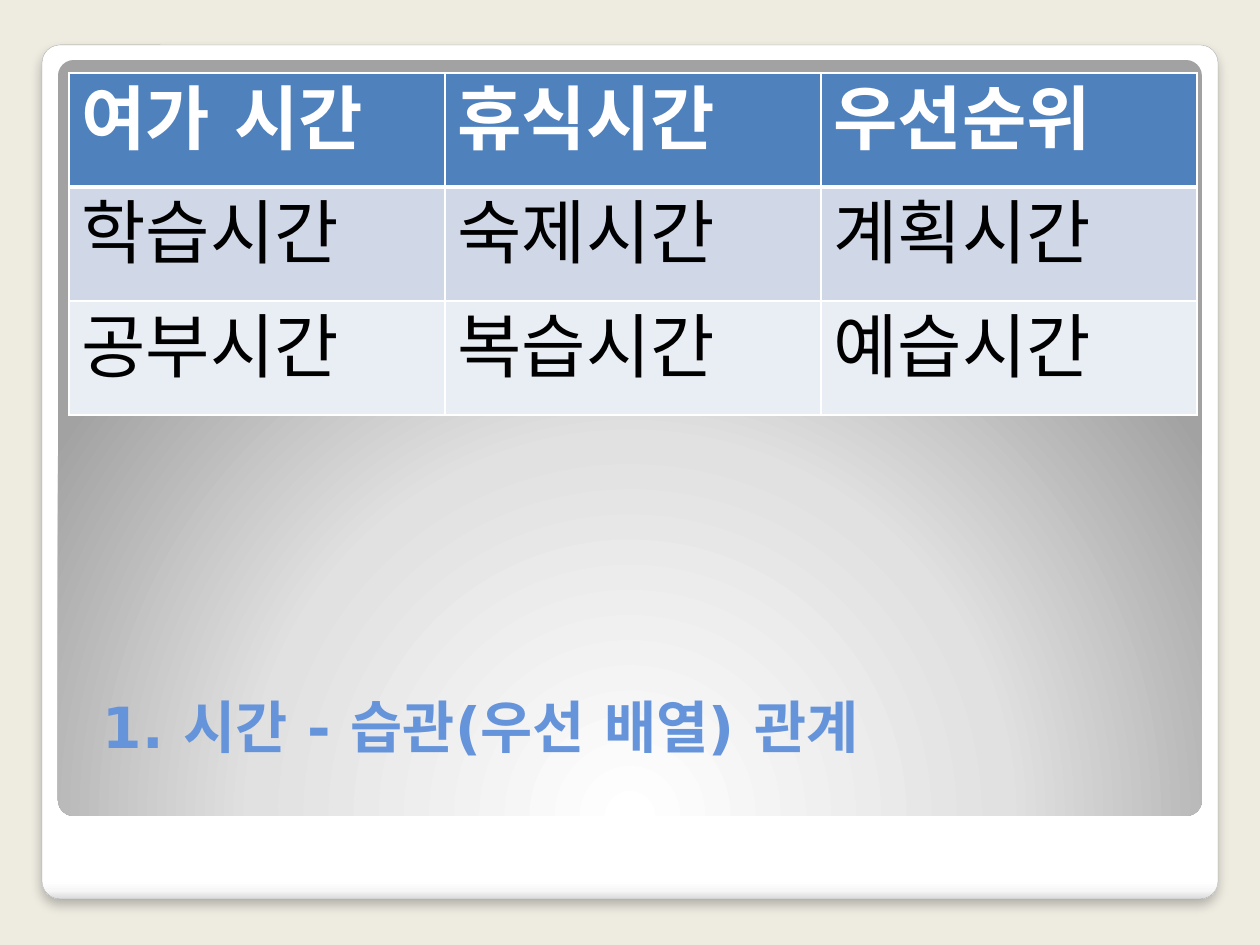
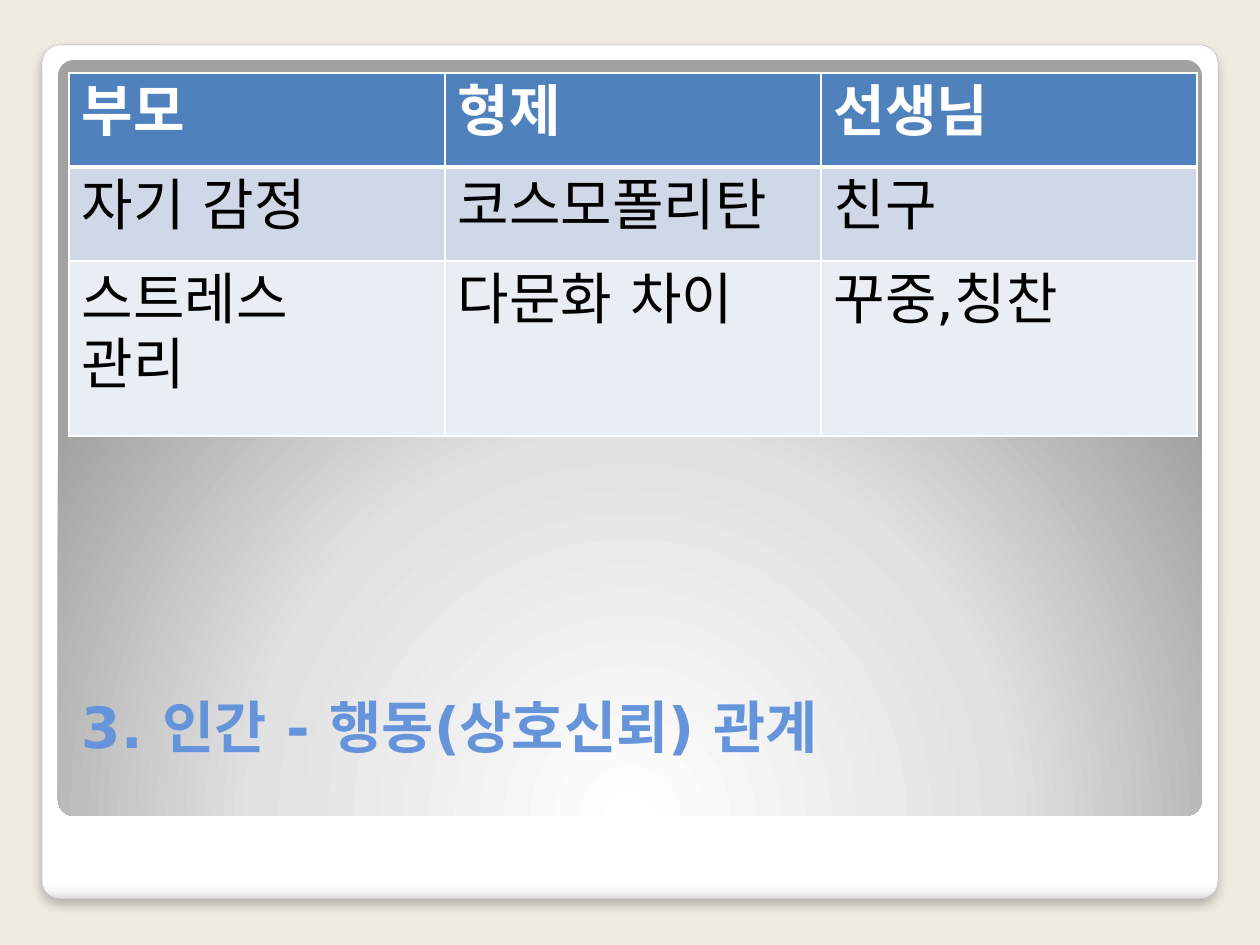
"""Build two slides that pair a table of terms with a heading on a framed grey panel."""
from dataclasses import dataclass

from lxml import etree
from pptx import Presentation
from pptx import util as u
from pptx.dml.color import RGBColor
from pptx.enum import shapes, text
from pptx.oxml import ns

SCALE = 914400 / 126
FONT = "DejaVu Sans"
CREAM = RGBColor(0xEE, 0xEC, 0xE1)
WHITE = RGBColor(0xFF, 0xFF, 0xFF)
SNOW = RGBColor(0xF7, 0xF7, 0xF7)
SILVER = RGBColor(0xDA, 0xDA, 0xDA)
PALE = RGBColor(0xE1, 0xE1, 0xE1)
ASH = RGBColor(0xA2, 0xA2, 0xA2)
EDGE = RGBColor(0xA4, 0xA4, 0xA4)
BLACK = RGBColor(0x00, 0x00, 0x00)
SKY = RGBColor(0x65, 0x94, 0xDA)
BLUE = RGBColor(0x4F, 0x81, 0xBD)
BANDS = (BLUE, RGBColor(0xD0, 0xD8, 0xE8), RGBColor(0xE9, 0xED, 0xF4))


@dataclass(frozen=True)
class Box:
    left: int
    top: int
    width: int
    height: int

    def emu(self) -> tuple:
        return tuple(map(px, (self.left, self.top, self.width, self.height)))


@dataclass(frozen=True)
class Panel:
    box: Box
    stops: tuple
    shade: str


@dataclass(frozen=True)
class Topic:
    title: str
    indent: int
    size: int
    heights: tuple
    rows: tuple


FRAME = Panel(
    Box(42, 45, 1176, 854),
    ((0, WHITE), (98, WHITE), (99, SNOW), (100, SILVER)),
    '<a:lin ang="5400000" scaled="0"/>',
)
SCREEN = Panel(
    Box(58, 60, 1144, 756),
    ((0, WHITE), (55, PALE), (100, ASH)),
    '<a:path path="circle"><a:fillToRect l="50000" t="175000" r="50000" b="-75000"/></a:path>',
)
TITLE = Box(69, 687, 1128, 145)
GRID = Box(69, 73, 1128, 342)
TOPICS = (
    Topic("1. 시간 - 습관(우선 배열) 관계", 34, 40, (114, 114, 114), (
        ("여가 시간", "휴식시간", "우선순위"),
        ("학습시간", "숙제시간", "계획시간"),
        ("공부시간", "복습시간", "예습시간"),
    )),
    Topic("3. 인간 - 행동(상호신뢰) 관계", 13, 32, (94, 94, 175), (
        ("부모", "형제", "선생님"),
        ("자기 감정", "코스모폴리탄", "친구"),
        ("스트레스\n관리", "다문화 차이", "꾸중,칭찬"),
    )),
)


def px(count: int) -> u.Emu:
    return u.Emu(round(count * SCALE))


def node(xml: str) -> etree.ElementBase:
    """Parse one DrawingML element given without its namespace."""
    head, tail = xml.split(">", 1)
    close = "/" if head.endswith("/") else ""
    return etree.fromstring(f'{head.rstrip("/")} {ns.nsdecls("a")}{close}>{tail}')


def add_run(par, words: str, size: float, color: RGBColor, bold: bool) -> None:
    run = par.add_run()
    run.text = words
    font = run.font
    font.name, font.size, font.bold = FONT, u.Pt(size), bold
    font.color.rgb = color
    run._r.get_or_add_rPr().append(node(f'<a:ea typeface="{FONT}"/>'))


def add_panel(slide, panel: Panel):
    """Draw a rounded panel with a gradient fill and no line."""
    shape = slide.shapes.add_shape(shapes.MSO_SHAPE.ROUNDED_RECTANGLE, *panel.box.emu())
    shape.adjustments[0] = 0.021
    shape.shadow.inherit = False
    shape.line.fill.background()
    stops = "".join(
        f'<a:gs pos="{pos * 1000}"><a:srgbClr val="{color}"/></a:gs>'
        for pos, color in panel.stops
    )
    fill = node(f"<a:gradFill><a:gsLst>{stops}</a:gsLst>{panel.shade}</a:gradFill>")
    shape.element.spPr.insert(2, fill)
    return shape


def add_frame(slide) -> None:
    """Draw the outer panel with its thin edge and soft shadow."""
    shape = add_panel(slide, FRAME)
    shape.line.color.rgb = EDGE
    shape.line.width = u.Pt(0.16)
    shape.element.spPr.find(ns.qn("a:effectLst")).append(node(
        f'<a:outerShdw blurRad="{u.Pt(6)}" dist="{u.Pt(4)}" dir="5400000" algn="t" rotWithShape="0">'
        f'<a:srgbClr val="{BLACK}"><a:alpha val="25000"/></a:srgbClr></a:outerShdw>'
    ))


def add_title(slide, topic: Topic) -> None:
    frame = slide.shapes.add_textbox(*TITLE.emu()).text_frame
    frame.word_wrap = True
    frame.vertical_anchor = text.MSO_ANCHOR.BOTTOM
    frame.margin_left, frame.margin_top = px(topic.indent), 0
    frame.margin_bottom = px(77)
    add_run(frame.paragraphs[0], topic.title, 32.4, SKY, True)


def add_edge(cell, side: str, width: int) -> None:
    cell._tc.get_or_add_tcPr().append(node(
        f'<a:{side} w="{u.Pt(width)}"><a:solidFill><a:srgbClr val="{WHITE}"/></a:solidFill></a:{side}>'
    ))


def fill_cell(cell, words: str, row: int, size: int) -> None:
    """Set the borders, band colour and text of one cell."""
    for side, thick in (("lnL", False), ("lnR", False), ("lnT", row == 1), ("lnB", row == 0)):
        add_edge(cell, side, 3 if thick else 1)
    cell.fill.solid()
    cell.fill.fore_color.rgb = BANDS[row]
    frame = cell.text_frame
    for index, line in enumerate(words.split("\n")):
        par = frame.add_paragraph() if index else frame.paragraphs[0]
        add_run(par, line, size, BLACK if row else WHITE, row == 0)


def add_grid(slide, topic: Topic) -> None:
    count = len(topic.rows[0])
    table = slide.shapes.add_table(len(topic.rows), count, *GRID.emu()).table
    for col in table.columns:
        col.width = px(GRID.width // count)
    for row, words in enumerate(topic.rows):
        table.rows[row].height = px(topic.heights[row])
        for col, word in enumerate(words):
            fill_cell(table.cell(row, col), word, row, topic.size)


def add_topic(deck, topic: Topic) -> None:
    slide = deck.slides.add_slide(deck.slide_layouts[6])
    slide.background.fill.solid()
    slide.background.fill.fore_color.rgb = CREAM
    add_frame(slide)
    add_panel(slide, SCREEN)
    add_title(slide, topic)
    add_grid(slide, topic)


def main() -> None:
    deck = Presentation()
    deck.slide_width, deck.slide_height = px(1260), px(945)
    for topic in TOPICS:
        add_topic(deck, topic)
    deck.save("out.pptx")


if __name__ == "__main__":
    main()
